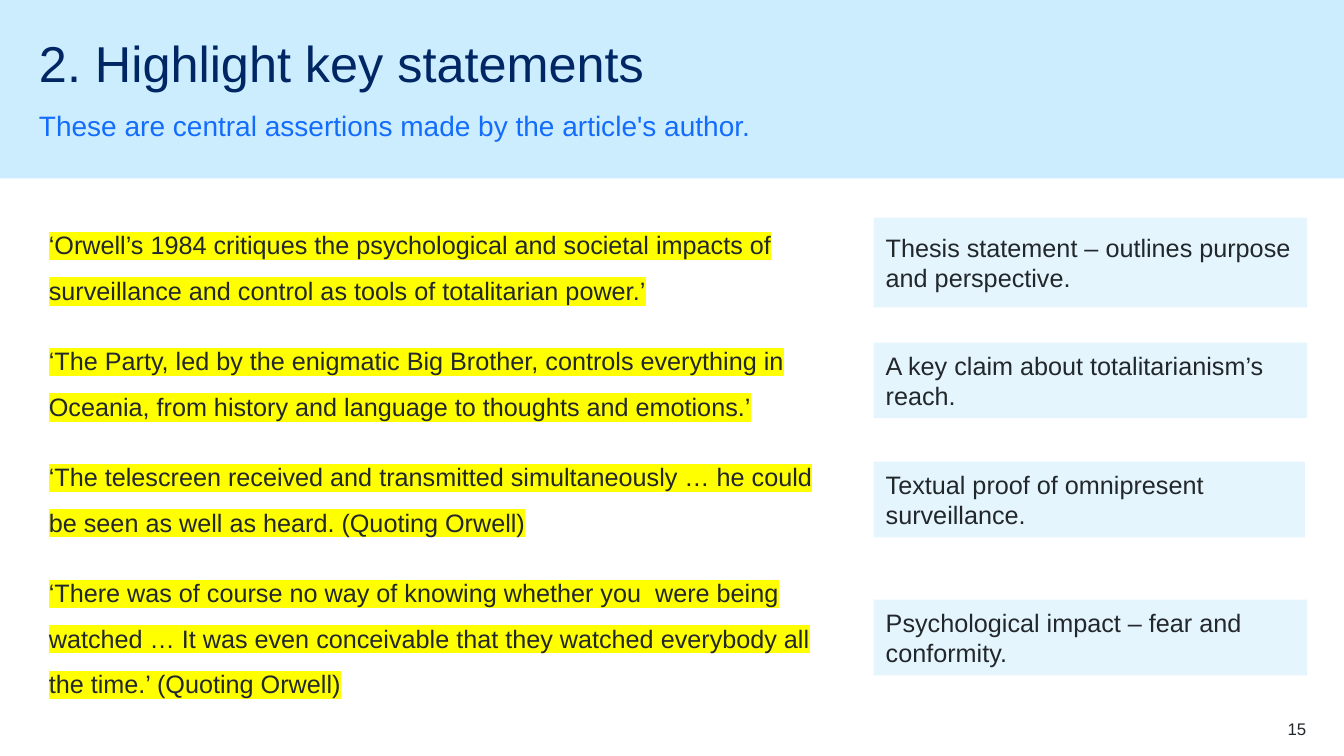
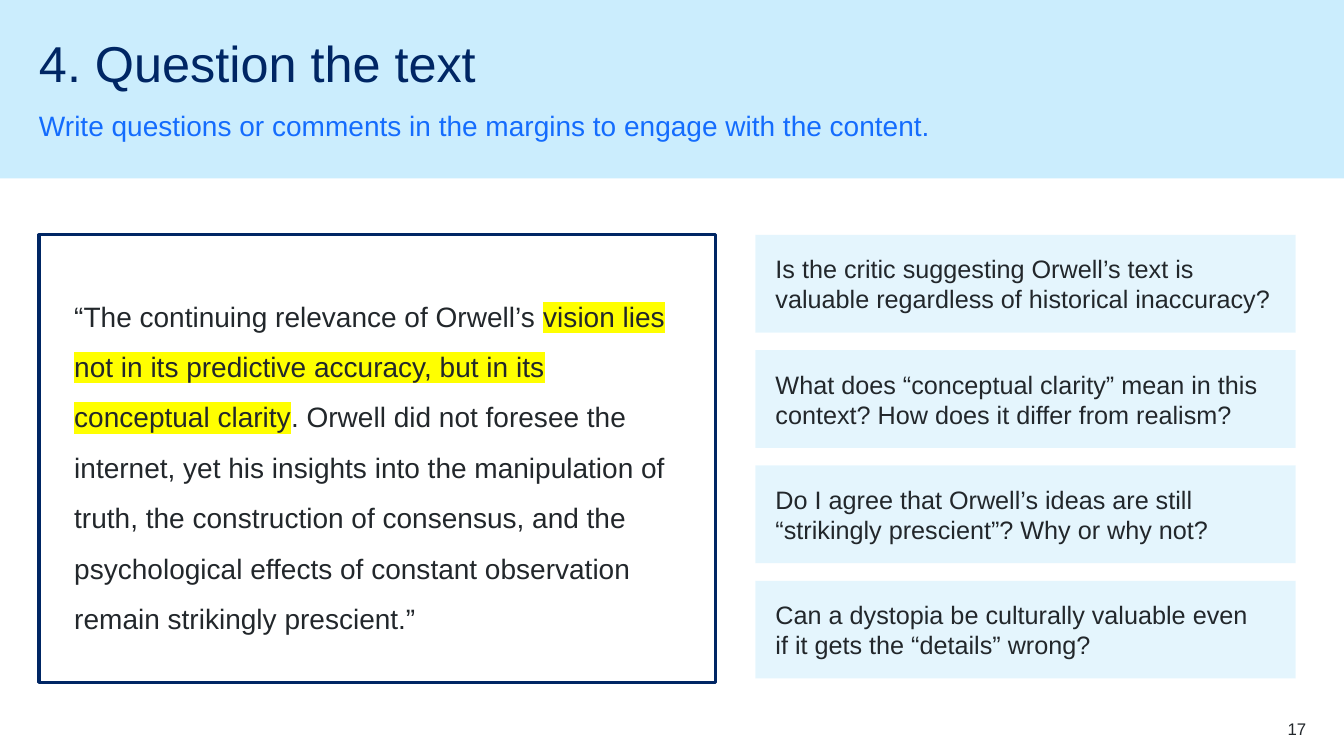
from lxml.etree import SubElement
from pptx import Presentation
from pptx.dml.color import RGBColor
from pptx.enum.shapes import MSO_SHAPE
from pptx.enum.text import MSO_ANCHOR, MSO_AUTO_SIZE, PP_ALIGN
from pptx.oxml.ns import qn
from pptx.util import Inches, Pt

COLORS = {
    "band": "CBEDFD",
    "navy": "002664",
    "blue": "146CFD",
    "text": "22272B",
    "marker": "FFFF00",
}
RGB = {name: RGBColor.from_string(value) for name, value in COLORS.items()}
FONT = "Arial"

prs = Presentation()
prs.slide_width, prs.slide_height = Inches(13.33), Inches(7.5)

# Shared grid, in percent of the slide's width and height
MARGIN, CONTENT_WIDTH = 2.9, 94.2


def place(left, top, width, height):
    """Turn percentages of the slide into a position and size."""
    across, down = prs.slide_width / 100, prs.slide_height / 100
    return [round(v) for v in (left * across, top * down, width * across, height * down)]


def write(shape, paragraphs, size, color="text", anchor=MSO_ANCHOR.MIDDLE,
          insets=(0, 0), align=PP_ALIGN.LEFT, spacing=1.0, after=0):
    """Fill a shape with paragraphs, each a list of (text, highlighted) runs."""
    frame = shape.text_frame
    frame.word_wrap, frame.auto_size = True, MSO_AUTO_SIZE.NONE
    frame.vertical_anchor = anchor
    frame.margin_left = frame.margin_right = Inches(insets[0])
    frame.margin_top = frame.margin_bottom = Inches(insets[1])
    for index, pieces in enumerate(paragraphs):
        paragraph = frame.add_paragraph() if index else frame.paragraphs[0]
        paragraph.alignment = align
        paragraph.line_spacing, paragraph.space_after = spacing, Pt(after)
        paragraph.space_before = Pt(0)
        font = paragraph.font
        font.name, font.size, font.color.rgb = FONT, Pt(size), RGB[color]
        for piece, highlighted in pieces:
            for line_number, line in enumerate(piece.split("\n")):
                if line_number:
                    paragraph.add_line_break()
                run = paragraph.add_run()
                run.text = line
                if highlighted:
                    highlight = SubElement(run.font._element, qn("a:highlight"))
                    SubElement(highlight, qn("a:srgbClr"), val=COLORS["marker"])


# What each slide says; a note is (text, top, width, height)
NOTE_WIDTH, NOTE_HEIGHT = 32.25, 10
QUESTION_TOP, QUESTION_STEP = 31.07, 15.25

statements = [
    "‘Orwell’s 1984 critiques the psychological and societal impacts of "
    "surveillance and control as tools of totalitarian power.’",
    "‘The Party, led by the enigmatic Big Brother, controls everything in "
    "Oceania, from history and language to thoughts and emotions.’",
    "‘The telescreen received and transmitted simultaneously … he could "
    "be seen as well as heard. (Quoting Orwell)",
    "‘There was of course no way of knowing whether you  were being watched … "
    "It was even conceivable that they watched everybody all the time.’ (Quoting Orwell)",
]
quote = [
    ("“The continuing relevance of Orwell’s ", False),
    ("vision lies not in its predictive accuracy, but in its conceptual clarity", True),
    (". Orwell did not foresee the internet, yet his insights into the manipulation "
     "of truth, the construction of consensus, and the psychological effects of "
     "constant observation remain strikingly prescient.”", False),
]
comments = [
    ("Thesis statement – outlines purpose and perspective.", 28.8, NOTE_WIDTH, 11.87),
    ("A key claim about totalitarianism’s reach.", 45.33, NOTE_WIDTH, NOTE_HEIGHT),
    ("Textual proof of omnipresent surveillance.", 61.07, 32.1, NOTE_HEIGHT),
    ("Psychological impact – fear and conformity.", 79.33, NOTE_WIDTH, NOTE_HEIGHT),
]
questions = [
    (question, QUESTION_TOP + row * QUESTION_STEP, 40.2, 12.93)
    for row, question in enumerate([
        "Is the critic suggesting Orwell’s text is valuable regardless of historical inaccuracy?",
        "What does “conceptual clarity” mean in this context? How does it differ from realism?",
        "Do I agree that Orwell’s ideas are still “strikingly prescient”? Why or why not?",
        "Can a dystopia be culturally valuable even\nif it gets the “details” wrong?",
    ])
]
# Heading, subheading, page number, notes, their left edge and side inset
pages = [
    ("2. Highlight key statements",
     "These are central assertions made by the article's author.",
     "15", comments, 65, 0.12),
    ("4. Question the text",
     "Write questions or comments in the margins to engage with the content.",
     "17", questions, 56.2, 0.2),
]

# Band, heading, notes and page number of every slide
slides = []
for heading, subheading, number, notes, notes_left, inset in pages:
    slide = prs.slides.add_slide(prs.slide_layouts[5])
    slides.append(slide)

    title = slide.shapes.title
    title.left, title.top, title.width, title.height = place(MARGIN, 5.2, CONTENT_WIDTH, 8)
    write(title, [[(heading, False)]], 36, "navy", MSO_ANCHOR.TOP, spacing=0.9)

    band = slide.shapes.add_shape(MSO_SHAPE.RECTANGLE, *place(0, 0, 100, 23.6))
    band.shadow.inherit = False
    band.fill.solid()
    band.fill.fore_color.rgb = RGB["band"]
    band.line.fill.background()
    title.element.addprevious(band.element)

    subtitle = slide.shapes.add_textbox(*place(MARGIN, 14.27, CONTENT_WIDTH, 4.53))
    write(subtitle, [[(subheading, False)]], 20, "blue", MSO_ANCHOR.BOTTOM,
          spacing=1.5, after=12)

    for text, top, width, height in notes:
        note = slide.shapes.add_shape(MSO_SHAPE.RECTANGLE,
                                      *place(notes_left, top, width, height))
        note.shadow.inherit = False
        note.fill.solid()
        note.fill.fore_color.rgb = RGB["band"]
        note_color = note.element.spPr.find(qn("a:solidFill")).find(qn("a:srgbClr"))
        SubElement(note_color, qn("a:alpha"), val="50000")
        note.line.fill.background()
        write(note, [[(text, False)]], 18, insets=(inset, 0))

    page_number = slide.shapes.add_textbox(*place(91.3, 95.07, 5.9, 2.67))
    write(page_number, [[(number, False)]], 12, anchor=MSO_ANCHOR.TOP, align=PP_ALIGN.RIGHT)

statements_slide, question_slide = slides

# Highlighted statements
statement_list = statements_slide.shapes.add_textbox(*place(MARGIN, 27.73, 59, 66.9))
write(statement_list, [[(statement, True)] for statement in statements], 18,
      anchor=MSO_ANCHOR.TOP, insets=(0.1, 0.05), spacing=1.5, after=18)

# Framed quotation
quote_frame = question_slide.shapes.add_shape(
    MSO_SHAPE.RECTANGLE, *place(MARGIN, QUESTION_TOP, 50.35, 59.2))
quote_frame.shadow.inherit = False
quote_frame.fill.background()
quote_frame.line.color.rgb = RGB["navy"]
quote_frame.line.width = Pt(2.25)
write(quote_frame, [quote], 20, insets=(0.35, 0.05), spacing=1.5, after=12)

prs.save("out.pptx")
